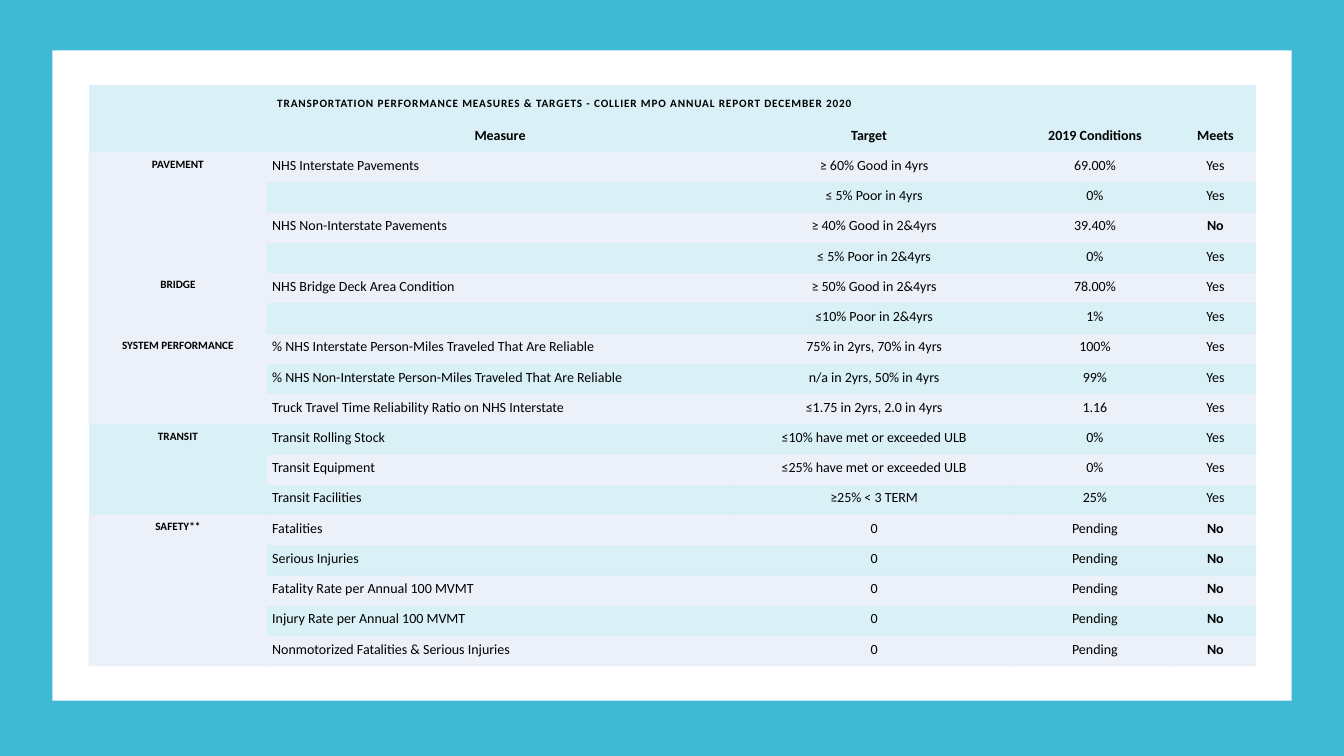
from dataclasses import dataclass

import lxml.etree
import pptx
import pptx.dml.color
import pptx.enum.shapes
import pptx.enum.text
import pptx.oxml.ns
import pptx.util

Inches = pptx.util.Inches
Align = pptx.enum.text.PP_ALIGN
Anchor = pptx.enum.text.MSO_ANCHOR
qn = pptx.oxml.ns.qn


@dataclass(frozen=True)
class Theme:
    font: str = "Calibri"
    frame: str = "40BAD2"
    panel: str = "FFFFFF"
    ink: str = "000000"
    tint: str = "D9F1F6"
    stripe: str = "DAE3F3"
    stripe_alpha: int = 50
    small: int = 8
    body: int = 10
    line_spacing: float = 1.15
    title_tracking: int = 60
    table_style: str = "{2D5ABB26-0587-4C30-8999-92F81FD0307C}"


@dataclass(frozen=True)
class CellStyle:
    size: int
    bold: bool = False
    align: Align = Align.CENTER
    anchor: Anchor = Anchor.MIDDLE
    insets: tuple[float, float, float, float] = (0.05, 0.01, 0.05, 0.07)
    tracking: int = 0


@dataclass(frozen=True)
class Measure:
    name: str
    target: str
    condition: str
    meets: str = "Yes"


@dataclass(frozen=True)
class Category:
    name: str
    measures: tuple[Measure, ...]


THEME = Theme()
TITLE = CellStyle(THEME.small, True, Align.LEFT, Anchor.TOP, (0.1, 0.1, 0.1, 0.1), THEME.title_tracking)
HEADING = CellStyle(THEME.body, True)
TARGET_HEADING = CellStyle(THEME.body, True, insets=(0.05, 0.01, 0.15, 0.07))
CATEGORY = CellStyle(THEME.small, True, anchor=Anchor.TOP, insets=(0.06, 0.03, 0.06, 0.07))
NAME = CellStyle(THEME.body, align=Align.LEFT)
VALUE = CellStyle(THEME.body)
MISSED = CellStyle(THEME.body, True)

TITLE_TEXT = "TRANSPORTATION PERFORMANCE MEASURES & TARGETS - COLLIER MPO ANNUAL REPORT DECEMBER 2020"
HEADINGS = ("", "Measure", "Target", "2019 Conditions", "Meets")
COLUMN_WIDTHS = (1.77, 4.62, 2.8, 1.58, 0.81)
TITLE_HEIGHT, ROW_HEIGHT = 0.37, 0.3
HEADER_ROWS = 2

CATEGORIES = (
    Category("PAVEMENT", (
        Measure("NHS Interstate Pavements", "≥ 60% Good in 4yrs", "69.00%"),
        Measure("", "≤ 5% Poor in 4yrs", "0%"),
        Measure("NHS Non-Interstate Pavements", "≥ 40% Good in 2&4yrs", "39.40%", "No"),
        Measure("", "≤ 5% Poor in 2&4yrs", "0%"),
    )),
    Category("BRIDGE", (
        Measure("NHS Bridge Deck Area Condition", "≥ 50% Good in 2&4yrs", "78.00%"),
        Measure("", "≤10% Poor in 2&4yrs", "1%"),
    )),
    Category("SYSTEM PERFORMANCE", (
        Measure("% NHS Interstate Person-Miles Traveled That Are Reliable", "75% in 2yrs, 70% in 4yrs", "100%"),
        Measure("% NHS Non-Interstate Person-Miles Traveled That Are Reliable", "n/a in 2yrs, 50% in 4yrs", "99%"),
        Measure("Truck Travel Time Reliability Ratio on NHS Interstate", "≤1.75 in 2yrs, 2.0 in 4yrs", "1.16"),
    )),
    Category("TRANSIT", (
        Measure("Transit Rolling Stock", "≤10% have met or exceeded ULB", "0%"),
        Measure("Transit Equipment", "≤25% have met or exceeded ULB", "0%"),
        Measure("Transit Facilities", "≥25% < 3 TERM", "25%"),
    )),
    Category("SAFETY**", tuple(
        Measure(name, "0", "Pending", "No")
        for name in (
            "Fatalities",
            "Serious Injuries",
            "Fatality Rate per Annual 100 MVMT",
            "Injury Rate per Annual 100 MVMT",
            "Nonmotorized Fatalities & Serious Injuries",
        )
    )),
)


def rgb(code: str) -> pptx.dml.color.RGBColor:
    return pptx.dml.color.RGBColor.from_string(code)


def draw_rectangle(page, left: float, top: float, width: float, height: float, color: str) -> None:
    box = page.shapes.add_shape(
        pptx.enum.shapes.MSO_SHAPE.RECTANGLE, Inches(left), Inches(top), Inches(width), Inches(height)
    )
    box.shadow.inherit = False
    box.fill.solid()
    box.fill.fore_color.rgb = rgb(color)
    box.line.fill.background()


def fill_cell(cell, striped: bool) -> None:
    cell.fill.solid()
    cell.fill.fore_color.rgb = rgb(THEME.stripe if striped else THEME.tint)
    if striped:
        color = cell._tc.tcPr.find(".//" + qn("a:srgbClr"))
        lxml.etree.SubElement(color, qn("a:alpha"), val=str(THEME.stripe_alpha * 1000))


def write_cell(cell, text: str, style: CellStyle, striped: bool = False) -> None:
    fill_cell(cell, striped)
    cell.vertical_anchor = style.anchor
    cell.margin_left, cell.margin_top, cell.margin_right, cell.margin_bottom = map(Inches, style.insets)
    para = cell.text_frame.paragraphs[0]
    para.alignment = style.align
    para.line_spacing = THEME.line_spacing
    font = para.font
    font.name = THEME.font
    font.size = pptx.util.Pt(style.size)
    font.bold = style.bold
    font.color.rgb = rgb(THEME.ink)
    if text:
        span = para.add_run()
        span.text = text
        if style.tracking:
            span._r.get_or_add_rPr().set("spc", str(style.tracking))
    else:
        lxml.etree.SubElement(para._p, qn("a:endParaRPr"), sz=str(style.size * 100))


def add_measure_table(page):
    row_count = HEADER_ROWS + sum(len(category.measures) for category in CATEGORIES)
    height = TITLE_HEIGHT + ROW_HEIGHT * (row_count - 1)
    frame = page.shapes.add_table(
        row_count, len(COLUMN_WIDTHS), Inches(0.88), Inches(0.84), Inches(sum(COLUMN_WIDTHS)), Inches(height)
    )
    table = frame.table
    table.first_row = table.horz_banding = False
    table._tbl.tblPr.find(qn("a:tableStyleId")).text = THEME.table_style
    for column, width in zip(table.columns, COLUMN_WIDTHS):
        column.width = Inches(width)
    for index, row in enumerate(table.rows):
        row.height = Inches(ROW_HEIGHT if index else TITLE_HEIGHT)
    return table


def write_headings(table) -> None:
    for column, heading in enumerate(HEADINGS):
        write_cell(table.cell(0, column), TITLE_TEXT if column == 1 else "", TITLE)
        write_cell(table.cell(1, column), heading, TARGET_HEADING if heading == "Target" else HEADING)
    table.cell(0, 1).merge(table.cell(0, len(HEADINGS) - 1))


def write_category(table, first: int, category: Category) -> int:
    end = first + len(category.measures)
    for row, measure in enumerate(category.measures, first):
        striped = row % 2 == 0
        label = category.name if row == first else ""
        write_cell(table.cell(row, 0), label, CATEGORY, first % 2 == 0)
        write_cell(table.cell(row, 1), measure.name, NAME, striped)
        write_cell(table.cell(row, 2), measure.target, VALUE, striped)
        write_cell(table.cell(row, 3), measure.condition, VALUE, striped)
        write_cell(table.cell(row, 4), measure.meets, MISSED if measure.meets == "No" else VALUE, striped)
    table.cell(first, 0).merge(table.cell(end - 1, 0))
    return end


def main() -> None:
    deck = pptx.Presentation()
    deck.slide_width, deck.slide_height = Inches(13.33), Inches(7.5)
    page = deck.slides.add_slide(deck.slide_layouts[6])
    draw_rectangle(page, 0, 0, 13.33, 7.5, THEME.frame)
    draw_rectangle(page, 0.52, 0.5, 12.29, 6.45, THEME.panel)
    table = add_measure_table(page)
    write_headings(table)
    row = HEADER_ROWS
    for category in CATEGORIES:
        row = write_category(table, row, category)
    deck.save("out.pptx")


if __name__ == "__main__":
    main()
